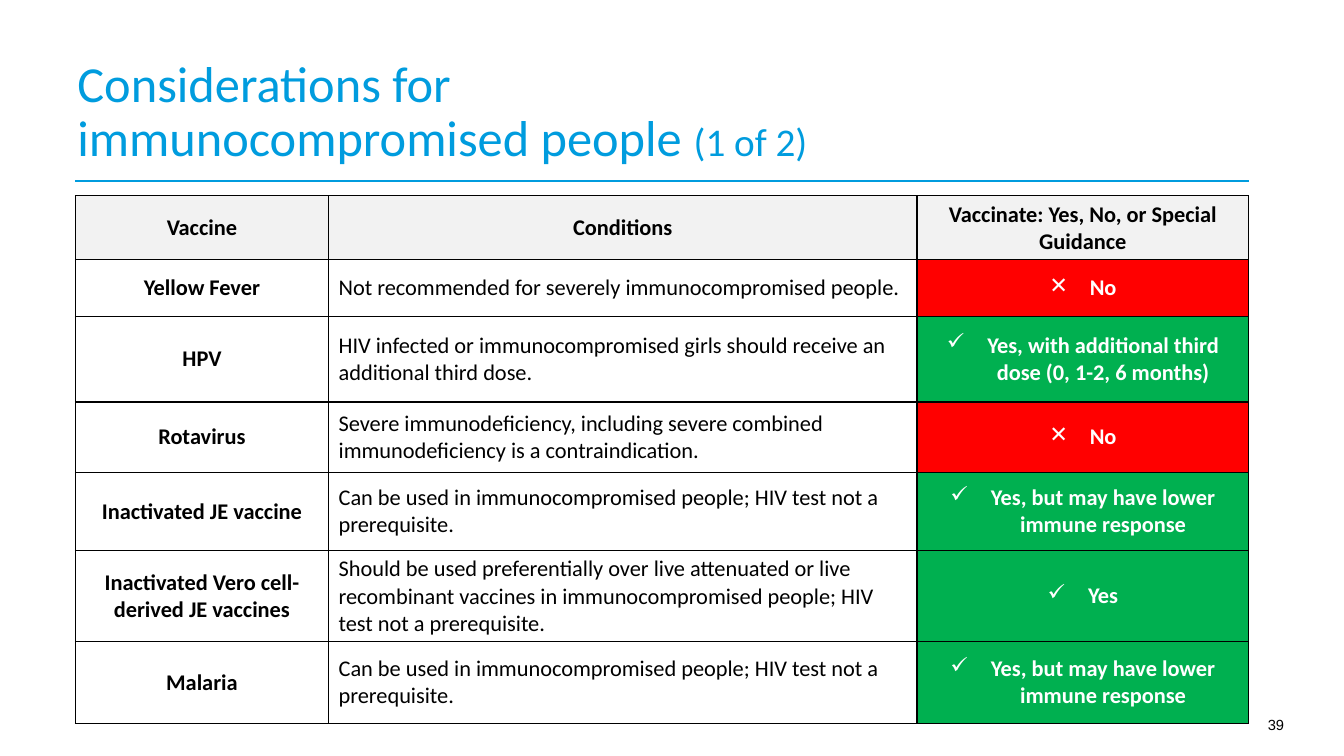
import pptx
import pptx.dml.color
import pptx.enum.shapes
import pptx.enum.text
import pptx.oxml
import pptx.oxml.ns
import pptx.util
from lxml import etree

Cm = pptx.util.Cm
Pt = pptx.util.Pt
ALIGN = pptx.enum.text.PP_ALIGN
ANCHOR = pptx.enum.text.MSO_ANCHOR

COLORS = {
    "title": "009CDE",
    "text": "000000",
    "header": "F2F2F2",
    "plain": "FFFFFF",
    "no": "FF0000",
    "yes": "00B050",
}
MARKS = {"no": "✕", "yes": "✓"}
LEFT, WIDTH = 1.9, 29.57
COLUMN_WIDTHS = (6.38, 14.83, 8.36)
ROW_HEIGHTS = (1.61, 1.43, 2.16, 1.78, 1.96, 2.3, 2.06)
HEADINGS = ("Vaccine", "Conditions", "Vaccinate: Yes, No, or Special Guidance")
LOWER_RESPONSE = "Yes, but may have lower immune response"
NO_TEST = "Can be used in immunocompromised people; HIV test not a prerequisite."
VACCINES = [
    ("Yellow Fever", "Not recommended for severely immunocompromised people.", "no", "No"),
    ("HPV", "HIV infected or immunocompromised girls should receive an additional third dose.",
     "yes", "Yes, with additional third dose (0, 1-2, 6 months)"),
    ("Rotavirus", "Severe immunodeficiency, including severe combined immunodeficiency "
     "is a contraindication.", "no", "No"),
    ("Inactivated JE vaccine", NO_TEST, "yes", LOWER_RESPONSE),
    ("Inactivated Vero cell-derived JE vaccines",
     "Should be used preferentially over live attenuated or live recombinant vaccines in "
     "immunocompromised people; HIV test not a prerequisite.", "yes", "Yes"),
    ("Malaria", NO_TEST, "yes", LOWER_RESPONSE),
]


def rgb(name):
    return pptx.dml.color.RGBColor.from_string(COLORS[name])


def format_span(span, size, color, bold=False, font="Calibri"):
    span.font.name = font
    span.font.size = Pt(size)
    span.font.bold = bold
    span.font.color.rgb = rgb(color)


def add_borders(cell):
    properties = cell._tc.get_or_add_tcPr()
    for side in ("lnL", "lnR", "lnT", "lnB"):
        properties.append(pptx.oxml.parse_xml(
            f'<a:{side} {pptx.oxml.ns.nsdecls("a")} w="{Pt(1)}"><a:solidFill>'
            f'<a:srgbClr val="{COLORS["text"]}"/></a:solidFill></a:{side}>'))


def add_bullet(para, mark):
    para.level = 1
    properties = para._p.get_or_add_pPr()
    properties.set("marL", str(Cm(1.02)))
    properties.set("indent", str(-Cm(1.02)))
    bullet = etree.SubElement(properties, pptx.oxml.ns.qn("a:buChar"))
    bullet.set("char", mark)


def fill_cell(cell, text, fill="plain", color="text", bold=True, align=ALIGN.CENTER, mark=None):
    add_borders(cell)
    cell.fill.solid()
    cell.fill.fore_color.rgb = rgb(fill)
    cell.vertical_anchor = ANCHOR.MIDDLE
    cell.text_frame.text = text
    para = cell.text_frame.paragraphs[0]
    if mark:
        add_bullet(para, mark)
    para.alignment = align
    format_span(para.runs[0], 16, color, bold)


def add_title(page, left, top, width, height):
    """Title with a smaller part number, and the rule below it."""
    title = page.shapes.title
    title.left, title.top, title.width, title.height = map(Cm, (left, top, width, height))
    frame = title.text_frame
    frame.auto_size = pptx.enum.text.MSO_AUTO_SIZE.NONE
    frame.word_wrap = True
    frame.vertical_anchor = ANCHOR.BOTTOM
    frame.margin_left, frame.margin_right = Cm(0.05), Cm(1)
    frame.margin_top = frame.margin_bottom = 0
    para = frame.paragraphs[0]
    para.alignment = ALIGN.LEFT
    para.line_spacing = 0.9
    for text, size in (("Considerations for immunocompromised people ", 36), ("(1 of 2)", 28)):
        span = para.add_run()
        span.text = text
        format_span(span, size, "title")

    rule_top = Cm(top + height + 0.35)
    rule = page.shapes.add_connector(pptx.enum.shapes.MSO_CONNECTOR.STRAIGHT,
                                     Cm(left), rule_top, Cm(left + WIDTH), rule_top)
    rule.line.color.rgb = rgb("title")
    rule.line.width = Pt(1.5)
    etree.SubElement(rule._element.spPr, pptx.oxml.ns.qn("a:effectLst"))


def add_vaccine_table(page, left, top):
    table = page.shapes.add_table(len(ROW_HEIGHTS), len(COLUMN_WIDTHS), Cm(left), Cm(top),
                                  Cm(WIDTH), Cm(sum(ROW_HEIGHTS))).table
    table.first_row = table.horz_banding = False
    for column, width in zip(table.columns, COLUMN_WIDTHS):
        column.width = Cm(width)
    for row, height in zip(table.rows, ROW_HEIGHTS):
        row.height = Cm(height)
    for column, heading in enumerate(HEADINGS):
        fill_cell(table.cell(0, column), heading, fill="header")
    for row, (vaccine, condition, verdict, guidance) in enumerate(VACCINES, start=1):
        fill_cell(table.cell(row, 0), vaccine)
        fill_cell(table.cell(row, 1), condition, bold=False, align=ALIGN.LEFT)
        fill_cell(table.cell(row, 2), guidance, fill=verdict, color="plain", mark=MARKS[verdict])


def add_page_number(page, left, top, width, height):
    box = page.shapes.add_textbox(Cm(left), Cm(top), Cm(width), Cm(height))
    box.text_frame.word_wrap = True
    box.text_frame.text = "39"
    para = box.text_frame.paragraphs[0]
    para.alignment = ALIGN.RIGHT
    format_span(para.runs[0], 10.5, "text", font="Arial")


def main():
    deck = pptx.Presentation()
    deck.slide_width, deck.slide_height = Cm(33.87), Cm(19.05)
    page = deck.slides.add_slide(deck.slide_layouts.get_by_name("Title Only"))
    add_page_number(page, 30.35, 17.91, 2.26, 0.74)
    add_vaccine_table(page, LEFT, 4.93)
    add_title(page, LEFT, 2.21, 20.4, 2.01)
    deck.save("out.pptx")


if __name__ == "__main__":
    main()
